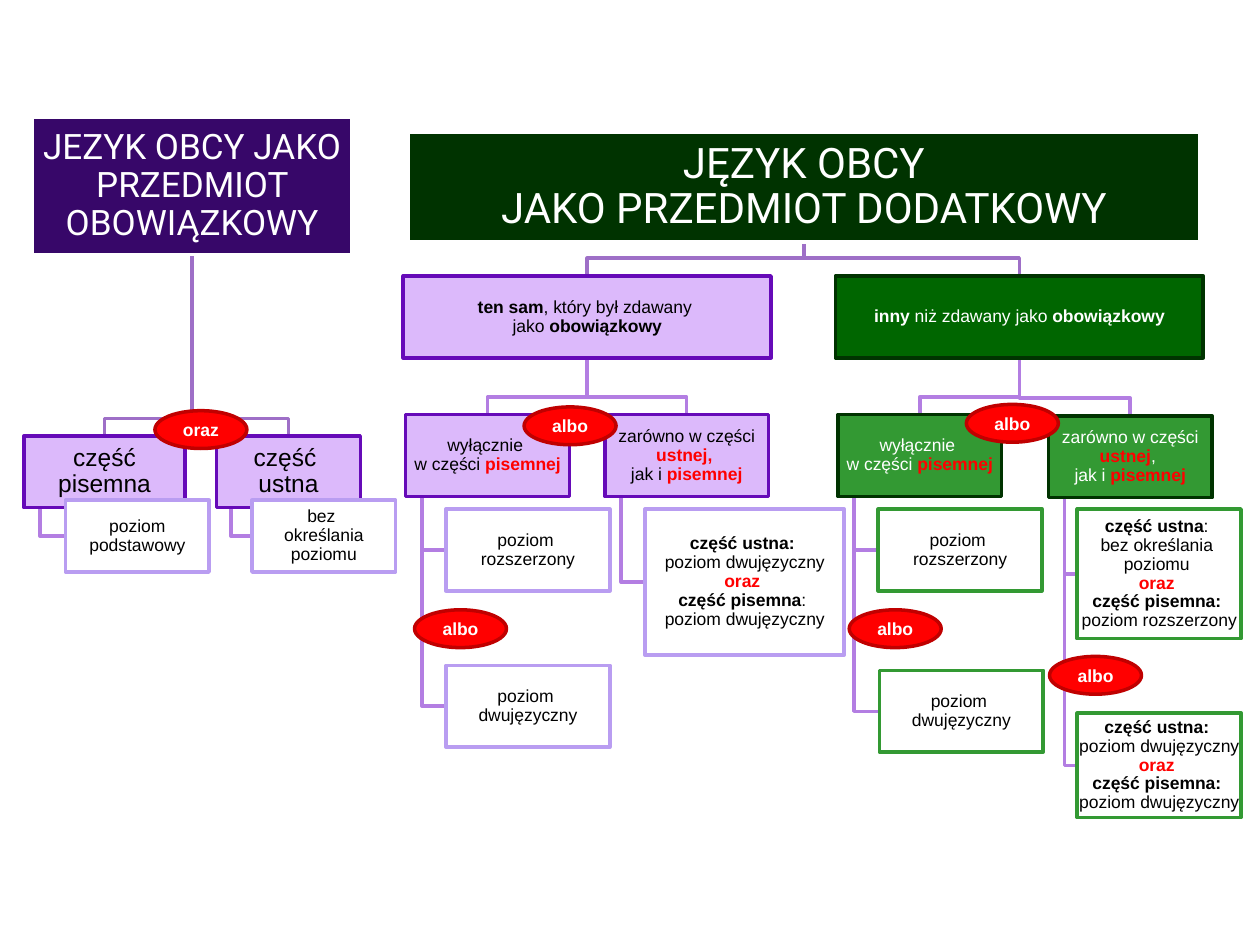
import pptx
import pptx.util
import pptx.dml.color
import pptx.enum.shapes
import pptx.enum.text
from lxml import etree

RGBColor = pptx.dml.color.RGBColor
WHITE = RGBColor(0xFF, 0xFF, 0xFF)
BLACK = RGBColor(0x00, 0x00, 0x00)
RED = RGBColor(0xFF, 0x00, 0x00)
DARK_RED = RGBColor(0xC0, 0x00, 0x00)
INDIGO = RGBColor(0x37, 0x07, 0x69)
VIOLET = RGBColor(0x66, 0x0A, 0xB8)
LILAC = RGBColor(0xDC, 0xB9, 0xFB)
LAVENDER = RGBColor(0xB9, 0x9D, 0xF1)
DEEP_GREEN = RGBColor(0x00, 0x33, 0x00)
GREEN = RGBColor(0x00, 0x66, 0x00)
LIGHT_GREEN = RGBColor(0x33, 0x99, 0x33)
MAIN_BRANCH = RGBColor(0x9E, 0x6F, 0xC7)
SUB_BRANCH = RGBColor(0xB3, 0x7E, 0xE2)

WIDTH, HEIGHT = 10, 7.5
LINE_WEIGHT = 2
BRANCH_DROP = 0.14
HANG_SHARE = 0.1

STYLES = {
    "required": dict(fill=INDIGO, line=WHITE, color=WHITE, size=20, font="Roboto"),
    "additional": dict(fill=DEEP_GREEN, line=WHITE, color=WHITE, size=24, font="Roboto"),
    "exam part": dict(fill=LILAC, line=VIOLET, color=BLACK, size=14, font="Arial"),
    "same": dict(fill=LILAC, line=VIOLET, color=BLACK, size=10, font="Arial"),
    "other": dict(fill=GREEN, line=DEEP_GREEN, color=WHITE, size=10, font="Arial"),
    "other part": dict(fill=LIGHT_GREEN, line=DEEP_GREEN, color=WHITE, size=10, font="Arial"),
    "same level": dict(fill=WHITE, line=LAVENDER, color=BLACK, size=10, font="Arial"),
    "other level": dict(fill=WHITE, line=LIGHT_GREEN, color=BLACK, size=10, font="Arial"),
    "link word": dict(fill=RED, line=DARK_RED, color=WHITE, size=10, font="Arial"),
}

PLAIN, BOLD, ACCENT = "plain", "bold", "accent"
WRITTEN_ONLY = [("wyłącznie \nw części ", PLAIN), ("pisemnej", ACCENT)]
EXTENDED = [("poziom \nrozszerzony", PLAIN)]
BILINGUAL = [("poziom \ndwujęzyczny", PLAIN)]
BILINGUAL_BOTH = [("część ustna: \n", BOLD), ("poziom dwujęzyczny ", PLAIN), ("oraz \n", ACCENT)]

TOPICS, PARTS, LEVELS = 2.19, 3.29, 4.04
TOPIC, CARD = (2.92, 0.65), (1.3, 0.65)

NODES = {
    "required": (None, "required", (0.26, 0.93), (2.53, 1.09),
                 [("JEZYK OBCY JAKO PRZEDMIOT OBOWIĄZKOWY", PLAIN)]),
    "written": ("required", "exam part", (0.19, 3.46), (1.28, 0.57), [("część pisemna", PLAIN)]),
    "basic": ("written", "same level", (0.52, 3.97), (1.14, 0.57), [("poziom podstawowy", PLAIN)]),
    "oral": ("required", "exam part", (1.72, 3.46), (1.14, 0.57), [("część \nustna", PLAIN)]),
    "no level": ("oral", "same level", (2, 3.97), (1.14, 0.57),
                 [("bez \nokreślania poziomu", PLAIN)]),
    "additional": (None, "additional", (3.24, 1.05), (6.28, 0.87),
                   [("JĘZYK OBCY\nJAKO PRZEDMIOT DODATKOWY", PLAIN)]),
    "same": ("additional", "same", (3.2, TOPICS), TOPIC,
             [("ten sam", BOLD), (", który był zdawany \njako ", PLAIN), ("obowiązkowy", BOLD)]),
    "same written": ("same", "same", (3.22, PARTS), CARD, WRITTEN_ONLY),
    "same extended": ("same written", "same level", (3.54, LEVELS), CARD, EXTENDED),
    "same bilingual": ("same written", "same level", (3.54, 5.28), CARD, BILINGUAL),
    "same both": ("same", "same", (4.8, PARTS), CARD,
                  [("zarówno w części ", PLAIN), ("ustnej, \n", ACCENT),
                   ("jak i ", PLAIN), ("pisemnej", ACCENT)]),
    "same both bilingual": ("same both", "same level", (5.12, LEVELS), (1.58, 1.16),
                            BILINGUAL_BOTH + [("część pisemna", BOLD),
                                              (": \npoziom dwujęzyczny", PLAIN)]),
    "other": ("additional", "other", (6.63, TOPICS), TOPIC,
              [("inny", BOLD), (" niż zdawany jako ", PLAIN), ("obowiązkowy", BOLD)]),
    "other written": ("other", "other part", (6.65, PARTS), CARD, WRITTEN_ONLY),
    "other extended": ("other written", "other level", (6.97, LEVELS), CARD, EXTENDED),
    "other bilingual": ("other written", "other level", (6.98, 5.32), CARD, BILINGUAL),
    "other both": ("other", "other part", (8.32, 3.3), CARD,
                   [("zarówno w części ", PLAIN), ("ustnej", ACCENT),
                    (", \njak i ", PLAIN), ("pisemnej", ACCENT)]),
    "other both extended": ("other both", "other level", (8.55, LEVELS), (1.3, 1.03),
                            [("część ustna", BOLD), (": \nbez określania \npoziomu \n", PLAIN),
                             ("oraz \n", ACCENT), ("część pisemna: \n", BOLD),
                             ("poziom rozszerzony", PLAIN)]),
    "other both bilingual": ("other both", "other level", (8.55, 5.66), (1.3, 0.83),
                             BILINGUAL_BOTH + [("część pisemna: \n", BOLD),
                                               ("poziom dwujęzyczny", PLAIN)]),
}

LINK_SIZE = (0.73, 0.3)
LINK_WORDS = [
    ("oraz", (1.23, 3.26)),
    ("albo", (3.29, 4.84)),
    ("albo", (4.16, 3.23)),
    ("albo", (7.67, 3.21)),
    ("albo", (6.74, 4.84)),
    ("albo", (8.33, 5.21)),
]


def set_all(target, values):
    for key, value in values.items():
        setattr(target, key, value)


def branch_points(parent, child):
    (parent_x, parent_y), (parent_w, parent_h) = parent[2:4]
    (child_x, child_y), (child_w, child_h) = child[2:4]
    bottom = parent_y + parent_h
    if child[1].endswith("level"):
        stem, middle = parent_x + parent_w * HANG_SHARE, child_y + child_h / 2
        return [(stem, bottom), (stem, middle), (child_x, middle)]
    stem, center, bend = parent_x + parent_w / 2, child_x + child_w / 2, child_y - BRANCH_DROP
    return [(stem, bottom), (stem, bend), (center, bend), (center, child_y)]


def add_branch(shapes, points, color):
    start, *rest = [tuple(pptx.util.Inches(v) for v in point) for point in points]
    builder = shapes.build_freeform(*start)
    builder.add_line_segments(rest, close=False)
    branch = builder.convert_to_shape()
    branch.shadow.inherit = False
    branch.fill.background()
    branch.line.color.rgb = color
    branch.line.width = pptx.util.Pt(LINE_WEIGHT)


def add_box(shapes, kind, style, position, size, runs, spacing):
    look = STYLES[style]
    box = shapes.add_shape(kind, *[pptx.util.Inches(v) for v in position + size])
    box.shadow.inherit = False
    box.fill.solid()
    box.fill.fore_color.rgb = look["fill"]
    box.line.color.rgb = look["line"]
    box.line.width = pptx.util.Pt(LINE_WEIGHT)
    inset = pptx.util.Inches(0.01)
    set_all(box.text_frame, dict(
        word_wrap=True, vertical_anchor=pptx.enum.text.MSO_ANCHOR.MIDDLE,
        margin_left=inset, margin_right=inset, margin_top=inset, margin_bottom=inset))
    paragraph = box.text_frame.paragraphs[0]
    set_all(paragraph, dict(alignment=pptx.enum.text.PP_ALIGN.CENTER, line_spacing=spacing))
    for text, emphasis in runs:
        for index, line in enumerate(text.split("\n")):
            if index:
                paragraph.add_line_break()
            if line:
                run = paragraph.add_run()
                run.text = line
                set_all(run.font, dict(name=look["font"], size=pptx.util.Pt(look["size"]),
                                       bold=emphasis != PLAIN))
                run.font.color.rgb = RED if emphasis == ACCENT else look["color"]
    for line_break in paragraph._p.findall(pptx.oxml.ns.qn("a:br")):
        etree.SubElement(line_break, pptx.oxml.ns.qn("a:rPr"), sz=str(look["size"] * 100))


def main():
    deck = pptx.Presentation()
    deck.slide_width, deck.slide_height = pptx.util.Inches(WIDTH), pptx.util.Inches(HEIGHT)
    shapes = deck.slides.add_slide(deck.slide_layouts[6]).shapes
    kinds = pptx.enum.shapes.MSO_SHAPE
    for node in NODES.values():
        if node[0]:
            parent = NODES[node[0]]
            color = SUB_BRANCH if parent[0] else MAIN_BRANCH
            add_branch(shapes, branch_points(parent, node), color)
    for _, style, position, size, runs in NODES.values():
        add_box(shapes, kinds.RECTANGLE, style, position, size, runs, 0.9)
    for word, position in LINK_WORDS:
        add_box(shapes, kinds.OVAL, "link word", position, LINK_SIZE, [(word, BOLD)], 1.0)
    deck.save("out.pptx")


if __name__ == "__main__":
    main()
